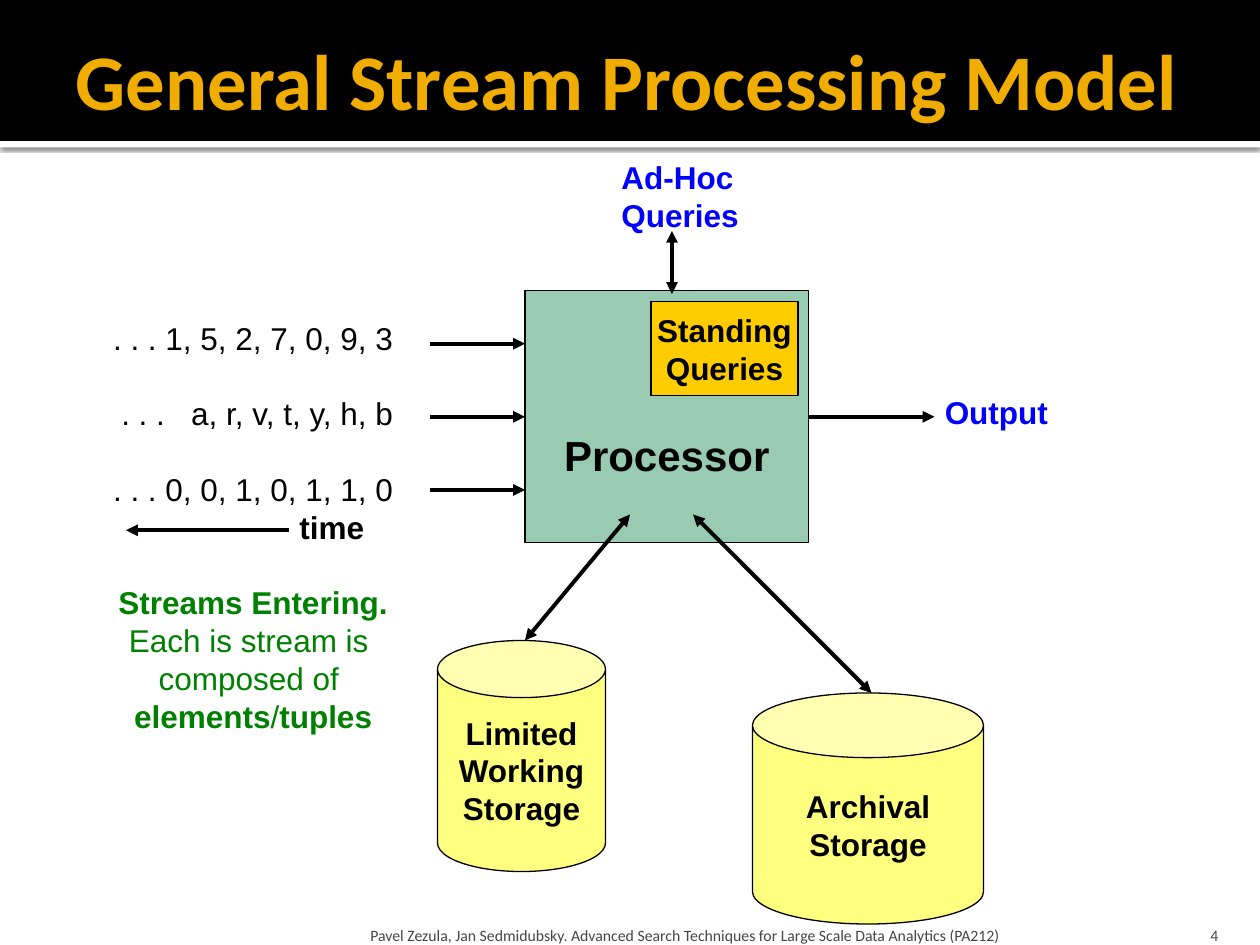
from dataclasses import dataclass

from lxml.etree import SubElement
from pptx import Presentation
from pptx.dml.color import RGBColor
from pptx.enum.shapes import MSO_CONNECTOR, MSO_SHAPE
from pptx.enum.text import MSO_ANCHOR, MSO_AUTO_SIZE, PP_ALIGN
from pptx.oxml.ns import qn
from pptx.util import Pt


@dataclass(frozen=True)
class Theme:
    black: str = "000000"
    white: str = "FFFFFF"
    gold: str = "F0AD00"
    grey: str = "454545"
    teal: str = "339966"
    yellow: str = "FFFF00"
    orange: str = "FFCC00"
    blue: str = "0000FF"
    green: str = "008000"
    heading_font: str = "Calibri"
    body_font: str = "Arial"
    title_size: float = 45
    large_size: float = 24
    body_size: float = 18
    small_size: float = 9
    blank_line: float = 21.6


THEME = Theme()
LEFT, CENTER, RIGHT = PP_ALIGN.LEFT, PP_ALIGN.CENTER, PP_ALIGN.RIGHT
BODY = dict(name=THEME.body_font, size=THEME.body_size, color=THEME.black, bold=False)
BOLD = BODY | dict(bold=True)
QUERY = BOLD | dict(color=THEME.blue)
NOTE = BODY | dict(color=THEME.green)
NOTE_BOLD = NOTE | dict(bold=True)
TITLE = dict(name=THEME.heading_font, size=THEME.title_size, color=THEME.gold, bold=True)
SMALL = dict(name=THEME.heading_font, size=THEME.small_size, color=THEME.grey, bold=False)


def rgb(value):
    return RGBColor.from_string(value)


def format_font(font, formats):
    for key, value in formats.items():
        if key == "color":
            font.color.rgb = rgb(value)
        else:
            setattr(font, key, Pt(value) if key == "size" else value)


def line(*spans, align=LEFT, before=0, indent=0):
    """Describe one paragraph; each span is a (text, formats) pair."""
    return dict(spans=spans, align=align, before=before, indent=indent)


def centered(text, formats):
    return [line((part, formats), align=CENTER) for part in text.split("\n")]


def write(shape, lines, anchor=MSO_ANCHOR.TOP, wrap=False, auto=MSO_AUTO_SIZE.NONE,
          insets=(7.2, 3.6, 7.2, 3.6)):
    frame = shape.text_frame
    frame.word_wrap, frame.auto_size, frame.vertical_anchor = wrap, auto, anchor
    for side, inset in zip(("left", "top", "right", "bottom"), insets):
        setattr(frame, f"margin_{side}", Pt(inset))
    for index, item in enumerate(lines):
        para = frame.add_paragraph() if index else frame.paragraphs[0]
        para.alignment = item["align"]
        if item["before"]:
            para.space_before = Pt(item["before"])
        if item["indent"]:
            para._p.get_or_add_pPr().set("marL", str(Pt(item["indent"])))
        for text, formats in item["spans"]:
            for number, part in enumerate(text.split("\n")):
                if number:
                    para.add_line_break()
                if part:
                    span = para.add_run()
                    span.text = part
                    format_font(span.font, formats)


def add_text(page, place, lines, **options):
    box = page.shapes.add_textbox(*map(Pt, place))
    write(box, lines, **options)


def add_block(page, kind, place, fill, alpha=None, outline=True):
    block = page.shapes.add_shape(kind, *map(Pt, place))
    block.shadow.inherit = False
    block.fill.solid()
    block.fill.fore_color.rgb = rgb(fill)
    if alpha:
        color = block.element.spPr.find(f"{qn('a:solidFill')}/{qn('a:srgbClr')}")
        SubElement(color, qn("a:alpha"), val=str(alpha * 1000))
    if outline:
        block.line.color.rgb = rgb(THEME.black)
        block.line.width = Pt(0.75)
    else:
        block.line.fill.background()
    return block


def add_storage(page, place, lid, label):
    can = add_block(page, MSO_SHAPE.CAN, place, THEME.yellow, alpha=50)
    can.adjustments[0] = lid
    write(can, centered(label, BOLD), anchor=MSO_ANCHOR.MIDDLE)


def add_arrow(page, start, end, both=False):
    arrow = page.shapes.add_connector(MSO_CONNECTOR.STRAIGHT, *map(Pt, start + end))
    arrow.line.color.rgb = rgb(THEME.black)
    arrow.line.width = Pt(2.25)
    stroke = arrow.line._get_or_add_ln()
    for tip in ("a:headEnd", "a:tailEnd") if both else ("a:tailEnd",):
        SubElement(stroke, qn(tip), type="triangle")
    SubElement(arrow.element.spPr, qn("a:effectLst"))


def add_header(page):
    strip = add_block(page, MSO_SHAPE.RECTANGLE, (0, 80.6, 720, 3.6), THEME.white, outline=False)
    effects = strip.element.spPr.find(qn("a:effectLst"))
    shadow = SubElement(effects, qn("a:outerShdw"), blurRad=str(Pt(2.5)), dist=str(Pt(0.8)),
                        dir="5400000", algn="t", rotWithShape="0")
    color = SubElement(shadow, qn("a:srgbClr"), val=THEME.black)
    SubElement(color, qn("a:alpha"), val="60000")
    add_block(page, MSO_SHAPE.RECTANGLE, (0, 0, 720, 80.6), THEME.black, outline=False)

    title = page.shapes.title
    title.left, title.top, title.width, title.height = map(Pt, (36, 12.2, 684, 66.2))
    write(title, [line(("General Stream Processing Model", TITLE))], wrap=True,
          anchor=MSO_ANCHOR.MIDDLE, insets=(7.2, 3.6, 3.6, 3.6))
    title.element.getparent().append(title.element)  # bring in front of the band


def add_footer(page):
    credit = ("Pavel Zezula, Jan Sedmidubsky. Advanced Search Techniques "
              "for Large Scale Data Analytics (PA212)")
    add_text(page, (208, 518.4, 433.4, 21.6), [line((credit, SMALL))], wrap=True,
             anchor=MSO_ANCHOR.BOTTOM, insets=(3.6, 3.6, 3.6, 0))
    add_text(page, (645.8, 518.4, 57.6, 21.6), [line(("4", SMALL), align=RIGHT)], wrap=True,
             anchor=MSO_ANCHOR.BOTTOM, insets=(7.2, 3.6, 7.2, 0))


def add_streams(page):
    for row in range(3):
        level = 196.4 + 41.8 * row
        add_arrow(page, (246, level), (300, level))
    gap = THEME.blank_line
    add_text(page, (55.4, 178.6, 176.4, 247), [
        line((". . . 1, 5, 2, 7, 0, 9, 3", BODY), align=RIGHT),
        line((". . .   a, r, v, t, y, h, b", BODY), align=RIGHT, before=gap),
        line((". . . 0, 0, 1, 0, 1, 1, 0", BODY), align=RIGHT, before=gap),
        line(("time", BOLD), indent=106.5),
        line(("Streams Entering.", NOTE_BOLD), align=CENTER, before=gap),
        line(("Each is stream is \ncomposed of \n", NOTE), ("elements", NOTE_BOLD),
             ("/", NOTE), ("tuples", NOTE_BOLD), align=CENTER),
    ], auto=MSO_AUTO_SIZE.SHAPE_TO_FIT_TEXT)
    add_arrow(page, (165, 303), (72, 303))


def add_processor(page):
    processor = add_block(page, MSO_SHAPE.RECTANGLE, (300, 166.2, 162, 144), THEME.teal, alpha=50)
    write(processor, centered("Processor", BOLD | dict(size=THEME.large_size)),
          anchor=MSO_ANCHOR.MIDDLE, insets=(7.2, 3.6 + 2 * THEME.blank_line, 7.2, 3.6))
    standing = add_block(page, MSO_SHAPE.RECTANGLE, (372, 172.2, 84, 54), THEME.orange)
    write(standing, centered("Standing\nQueries", BOLD), anchor=MSO_ANCHOR.MIDDLE)


def add_queries_and_output(page):
    fit = MSO_AUTO_SIZE.SHAPE_TO_FIT_TEXT
    add_text(page, (348, 87, 82, 51), [line(("Ad-Hoc", QUERY)), line(("Queries", QUERY))], auto=fit)
    add_arrow(page, (384, 132), (384, 168), both=True)
    add_text(page, (532.8, 221, 74.2, 28.8), [line(("Output", QUERY))], auto=fit)
    add_arrow(page, (462, 238.2), (534, 238.2))


def add_storages(page):
    add_storage(page, (250, 366, 96, 132), 0.34, "Limited\nWorking\nStorage")
    add_storage(page, (430, 396, 132, 132), 0.28, "Archival\nStorage")
    add_arrow(page, (360, 294), (300, 366), both=True)
    add_arrow(page, (396, 294), (498, 396), both=True)


def main():
    deck = Presentation()
    deck.slide_width, deck.slide_height = Pt(720), Pt(540)
    page = deck.slides.add_slide(deck.slide_layouts[5])
    add_header(page)
    add_footer(page)
    add_processor(page)
    add_streams(page)
    add_queries_and_output(page)
    add_storages(page)
    deck.save("out.pptx")


if __name__ == "__main__":
    main()
